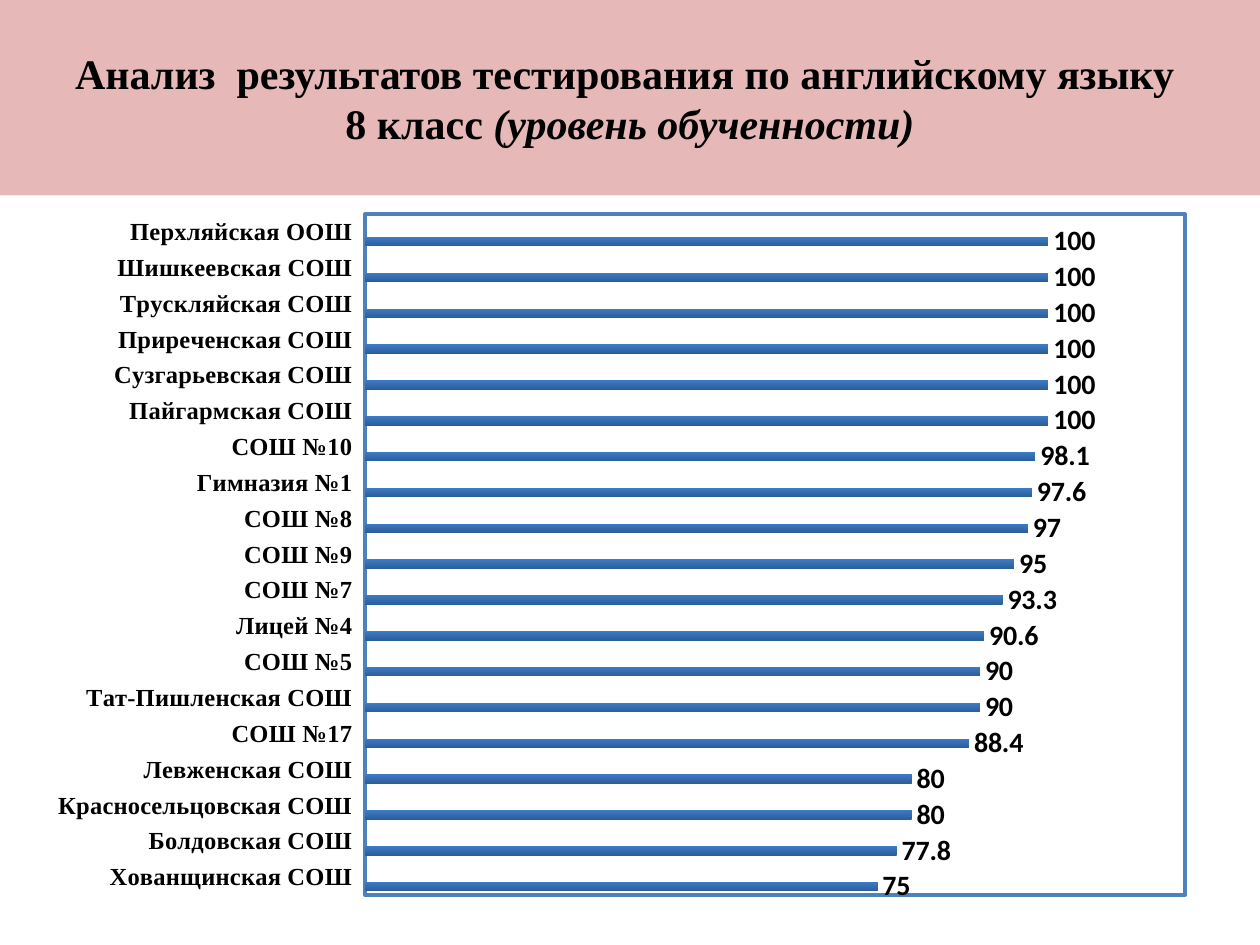
from pptx import Presentation
from pptx.chart.data import CategoryChartData
from pptx.dml.color import RGBColor
from pptx.enum.chart import XL_CHART_TYPE, XL_LABEL_POSITION, XL_TICK_LABEL_POSITION, XL_TICK_MARK
from pptx.enum.shapes import MSO_SHAPE
from pptx.enum.text import MSO_ANCHOR, PP_ALIGN
from pptx.oxml import parse_xml
from pptx.oxml.ns import nsdecls, qn
from pptx.util import Pt

BAR = XL_CHART_TYPE.BAR_CLUSTERED
OUTSIDE = XL_LABEL_POSITION.OUTSIDE_END
LOW = XL_TICK_LABEL_POSITION.LOW
NO_TICK = XL_TICK_MARK.NONE
RECT = MSO_SHAPE.RECTANGLE
MIDDLE = MSO_ANCHOR.MIDDLE
CENTER = PP_ALIGN.CENTER

SERIF, SANS = "Times New Roman", "Calibri"
COLORS = {
    "band": "E6B9B8",
    "text": "000000",
    "plot": "FFFFFF",
    "frame": "4F81BD",
    "dark": "2C5D98",
    "light": "3C7BC7",
}
SCORES = [
    ("Хованщинская СОШ", 75),
    ("Болдовская СОШ", 77.8),
    ("Красносельцовская СОШ", 80),
    ("Левженская СОШ", 80),
    ("СОШ №17", 88.4),
    ("Тат-Пишленская СОШ", 90),
    ("СОШ №5", 90),
    ("Лицей №4", 90.6),
    ("СОШ №7", 93.3),
    ("СОШ №9", 95),
    ("СОШ №8", 97),
    ("Гимназия №1", 97.6),
    ("СОШ №10", 98.1),
    ("Пайгармская СОШ", 100),
    ("Сузгарьевская СОШ", 100),
    ("Приреченская СОШ", 100),
    ("Трускляйская СОШ", 100),
    ("Шишкеевская СОШ", 100),
    ("Перхляйская ООШ", 100),
]


def color(name):
    return RGBColor.from_string(COLORS[name])


def set_font(font, face, size, bold=True):
    font.name, font.size, font.bold = face, Pt(size), bold
    font.color.rgb = color("text")


def add_title(slide):
    band = slide.shapes.add_shape(RECT, 0, 0, Pt(720), Pt(111.6))
    band.shadow.inherit = False
    band.fill.solid()
    band.fill.fore_color.rgb = color("band")
    band.line.fill.background()
    frame = band.text_frame
    frame.word_wrap = True
    frame.vertical_anchor = MIDDLE
    para = frame.paragraphs[0]
    para.alignment = CENTER
    set_font(para.font, SERIF, 24)
    para.add_run().text = "Анализ  результатов тестирования по английскому языку "
    para.add_line_break()
    para.add_run().text = "8 класс "
    level = para.add_run()
    level.text = "(уровень обученности)"
    level.font.italic = True


def frame_plot(chart, x, y, w, h):
    """Place the inner plot area by fractions of the chart and outline it."""
    area = chart._chartSpace.chart.plotArea
    for old in area.findall(qn("c:layout")):
        area.remove(old)
    sizes = "".join(f'<c:{tag} val="{val}"/>' for tag, val in zip("xywh", (x, y, w, h)))
    area.insert(0, parse_xml(
        f'<c:layout {nsdecls("c")}><c:manualLayout><c:layoutTarget val="inner"/>'
        f'<c:xMode val="edge"/><c:yMode val="edge"/>{sizes}</c:manualLayout></c:layout>'))
    area.append(parse_xml(
        f'<c:spPr {nsdecls("c", "a")}>'
        f'<a:solidFill><a:srgbClr val="{COLORS["plot"]}"/></a:solidFill>'
        f'<a:ln w="{Pt(2)}"><a:solidFill><a:srgbClr val="{COLORS["frame"]}"/>'
        '</a:solidFill></a:ln></c:spPr>'))


def style_axes(chart):
    names, scale = chart.category_axis, chart.value_axis
    names.major_tick_mark = names.minor_tick_mark = NO_TICK
    names.tick_label_position = LOW
    names.has_major_gridlines = False
    names.format.line.fill.background()
    set_font(names.tick_labels.font, SERIF, 14)
    scale.minimum_scale, scale.maximum_scale = 0, 120
    scale.has_major_gridlines = False
    scale.visible = False


def style_bars(series):
    fill = series.format.fill
    fill.gradient()
    fill.gradient_angle = 90
    for stop, name in zip(fill.gradient_stops, ("dark", "light")):
        stop.color.rgb = color(name)
    labels = series.data_labels
    labels.show_value = True
    labels.position = OUTSIDE
    set_font(labels.font, SANS, 16)


def add_scores(slide):
    data = CategoryChartData()
    data.categories = [name for name, _ in SCORES]
    data.add_series("Series 1", [score for _, score in SCORES])
    for name in ("Series 2", "Series 3"):
        data.add_series(name, [None] * len(SCORES))
    chart = slide.shapes.add_chart(
        BAR, Pt(14.4), Pt(105.84), Pt(669.6), Pt(414), data).chart
    chart.has_title = chart.has_legend = False
    set_font(chart.font, SANS, 18, False)
    plot = chart.plots[0]
    plot.gap_width = 75
    plot.vary_by_categories = False
    style_axes(chart)
    style_bars(plot.series[0])
    frame_plot(chart, 0.29, 0.04, 0.7, 0.94)


def main():
    deck = Presentation()
    deck.slide_width, deck.slide_height = Pt(720), Pt(540)
    slide = deck.slides.add_slide(deck.slide_layouts[6])
    add_scores(slide)
    add_title(slide)
    deck.save("out.pptx")


if __name__ == "__main__":
    main()
